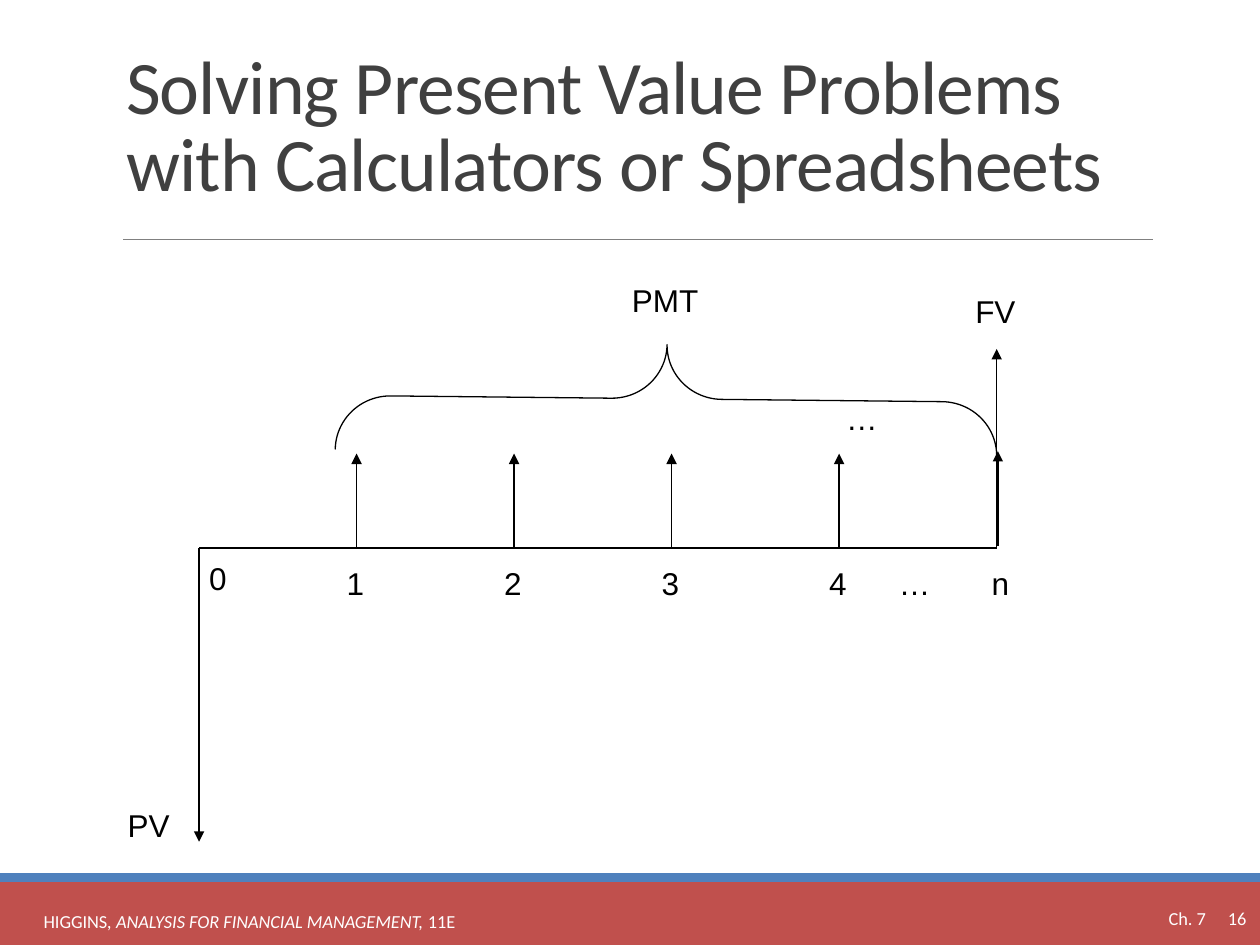
from dataclasses import dataclass

from lxml import etree
from pptx import Presentation
from pptx.dml.color import RGBColor
from pptx.enum.shapes import MSO_CONNECTOR, MSO_SHAPE
from pptx.enum.text import MSO_ANCHOR, MSO_AUTO_SIZE, PP_ALIGN
from pptx.oxml.ns import qn
from pptx.util import Inches, Pt

STRAIGHT = MSO_CONNECTOR.STRAIGHT
RECTANGLE, BRACE = MSO_SHAPE.RECTANGLE, MSO_SHAPE.RIGHT_BRACE
TOP, MIDDLE, BOTTOM = MSO_ANCHOR.TOP, MSO_ANCHOR.MIDDLE, MSO_ANCHOR.BOTTOM
CENTER, RIGHT, LEFT = PP_ALIGN.CENTER, PP_ALIGN.RIGHT, PP_ALIGN.LEFT
NO_AUTOFIT = MSO_AUTO_SIZE.NONE

BLACK, WHITE = "000000", "FFFFFF"
AXIS_START, AXIS_END, AXIS_Y = 1.58, 7.91, 4.35
PERIOD_Y, LABEL_HEIGHT = 4.43, 0.4


@dataclass
class Label:
    text: str
    center: float
    top: float
    width: float = 0.6


@dataclass
class Line:
    x1: float
    y1: float
    x2: float
    y2: float
    arrow: bool = True
    color: str = BLACK
    weight: float = 0.75


@dataclass
class Band:
    top: float
    height: float
    color: str


BANDS = [Band(7, 0.5, "C0504D"), Band(6.93, 0.07, "4F81BD")]

PAYMENT_XS = [2.83, 4.08, 5.33, 6.66]
CASH_FLOWS = [
    Line(AXIS_START, AXIS_Y, AXIS_END, AXIS_Y, arrow=False),
    Line(AXIS_START, AXIS_Y, AXIS_START, 6.68),
    *[Line(x, AXIS_Y, x, 3.6) for x in PAYMENT_XS],
    Line(7.92, 4.33, 7.92, 3.58),
    Line(AXIS_END, AXIS_Y, AXIS_END, 2.77),
]

LABELS = [
    Label("FV", 7.9, 2.27),
    Label("PMT", 5.28, 2.18, 0.8),
    Label("PV", 1.18, 6.35),
    Label("0", 1.73, 4.39),
    *[Label(str(n), x - 0.01, PERIOD_Y) for n, x in enumerate(PAYMENT_XS, 1)],
    Label("…", 7.26, PERIOD_Y),
    Label("n", 7.94, PERIOD_Y),
    Label("…", 6.84, 3.12),
]


def rgb(color: str) -> RGBColor:
    return RGBColor.from_string(color)


def format_runs(frame, font: str, size: float, color: str) -> None:
    for paragraph in frame.paragraphs:
        for run in paragraph.runs:
            run.font.name = font
            run.font.size = Pt(size)
            run.font.color.rgb = rgb(color)


def add_text(slide, text: str, left: float, top: float, width: float,
             align, anchor, wrap: bool):
    box = slide.shapes.add_textbox(
        Inches(left), Inches(top), Inches(width), Inches(LABEL_HEIGHT))
    frame = box.text_frame
    frame.word_wrap = wrap
    frame.vertical_anchor = anchor
    frame.text = text
    frame.paragraphs[0].alignment = align
    return frame


def add_label(slide, label: Label) -> None:
    frame = add_text(slide, label.text, label.center - label.width / 2,
                     label.top, label.width, CENTER, TOP, wrap=False)
    format_runs(frame, "Arial", 18, BLACK)


def add_line(slide, line: Line) -> None:
    connector = slide.shapes.add_connector(
        STRAIGHT, Inches(line.x1), Inches(line.y1),
        Inches(line.x2), Inches(line.y2))
    connector.line.color.rgb = rgb(line.color)
    connector.line.width = Pt(line.weight)
    properties = connector.element.spPr
    etree.SubElement(properties, qn("a:effectLst"))
    if line.arrow:
        outline = properties.find(qn("a:ln"))
        etree.SubElement(outline, qn("a:tailEnd"), type="triangle")


def add_band(slide, band: Band) -> None:
    shape = slide.shapes.add_shape(
        RECTANGLE, 0, Inches(band.top), Inches(10), Inches(band.height))
    shape.shadow.inherit = False
    shape.fill.solid()
    shape.fill.fore_color.rgb = rgb(band.color)
    shape.line.fill.background()


def add_payment_brace(slide) -> None:
    brace = slide.shapes.add_shape(
        BRACE, Inches(4.86), Inches(0.54), Inches(0.86), Inches(5.25))
    brace.rotation = 270.6
    brace.adjustments[0] = 0.509
    brace.adjustments[1] = 0.5
    brace.shadow.inherit = False
    brace.fill.background()
    brace.line.color.rgb = rgb(BLACK)
    brace.line.width = Pt(0.75)


def set_title(slide, text: str) -> None:
    title = slide.shapes.title
    title.left, title.top = Inches(0.9), Inches(0.25)
    title.width, title.height = Inches(8.25), Inches(1.44)
    frame = title.text_frame
    frame.text = text
    frame.word_wrap = True
    frame.auto_size = NO_AUTOFIT
    frame.vertical_anchor = BOTTOM
    paragraph = frame.paragraphs[0]
    paragraph.alignment = LEFT
    paragraph.line_spacing = 0.85
    format_runs(frame, "Calibri", 43.2, "404040")
    # Tighten the letter spacing by half a point
    paragraph.runs[0].font._element.set("spc", "-50")


def add_footer(slide) -> None:
    source = add_text(slide, "HIGGINS", 0, 7.11, 3.96, CENTER, MIDDLE, wrap=True)
    paragraph = source.paragraphs[0]
    book = paragraph.add_run()
    book.text = ", ANALYSIS FOR FINANCIAL MANAGEMENT, "
    book.font.italic = True
    paragraph.add_run().text = "11E"
    chapter = add_text(slide, "Ch. 7", 8.87, 7.09, 0.8, RIGHT, MIDDLE, wrap=True)
    page = add_text(slide, "16", 9.49, 7.09, 0.5, RIGHT, MIDDLE, wrap=True)
    for frame in (source, chapter, page):
        format_runs(frame, "Calibri", 10.5, WHITE)


def main() -> None:
    deck = Presentation()
    deck.slide_width, deck.slide_height = Inches(10), Inches(7.5)
    slide = deck.slides.add_slide(deck.slide_layouts[5])

    # Page frame
    for band in BANDS:
        add_band(slide, band)
    add_line(slide, Line(0.98, 1.9, 9.15, 1.9, False, "808080", 0.5))
    set_title(slide, "Solving Present Value Problems with Calculators or Spreadsheets")
    add_footer(slide)

    # Cash flow diagram
    for flow in CASH_FLOWS:
        add_line(slide, flow)
    add_payment_brace(slide)
    for label in LABELS:
        add_label(slide, label)

    deck.save("out.pptx")


if __name__ == "__main__":
    main()
